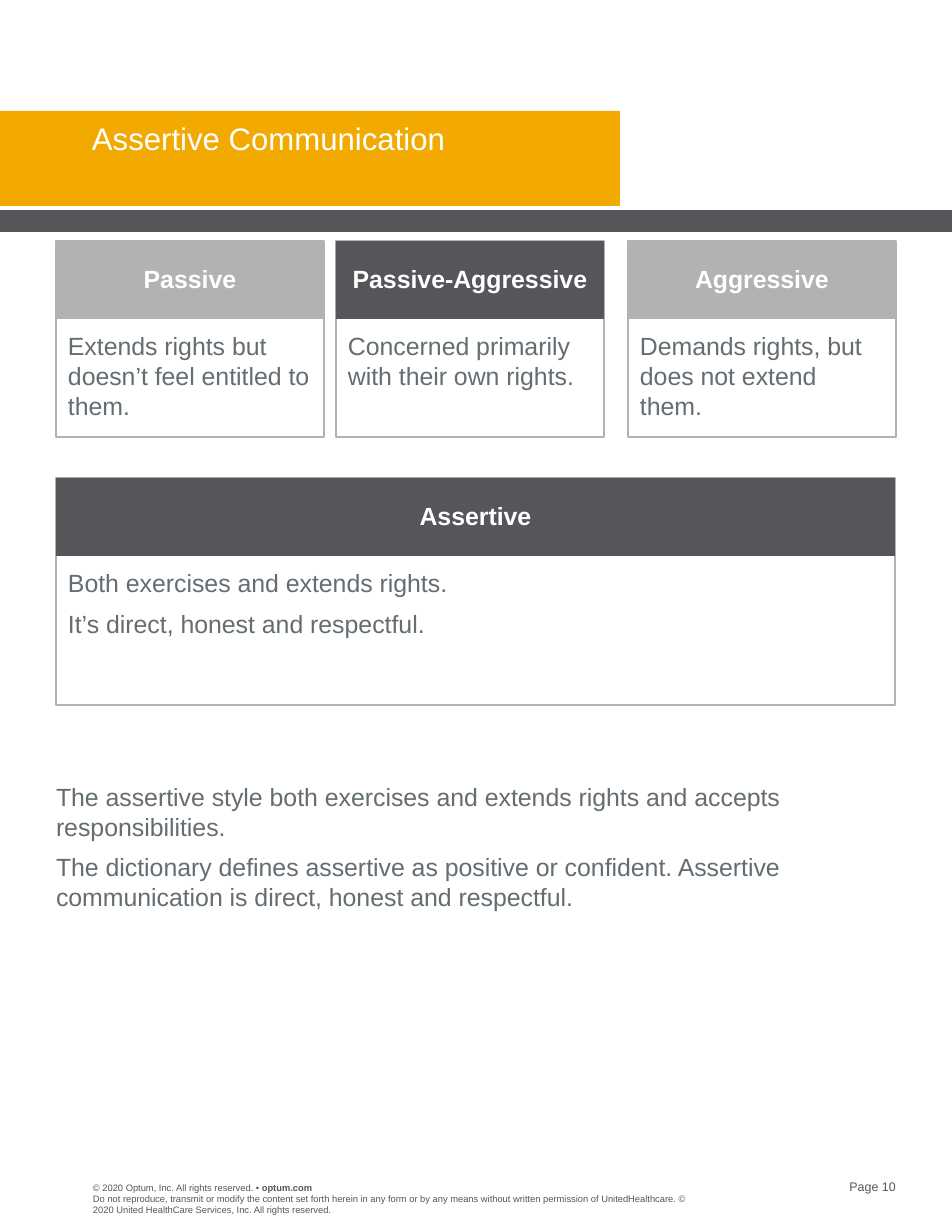
from pptx import Presentation
from pptx.dml.color import RGBColor
from pptx.enum.shapes import MSO_SHAPE as Shape
from pptx.enum.text import MSO_ANCHOR as Anchor, PP_ALIGN as Align
from pptx.util import Emu, Pt

SCALE = 914400 / 112
COLORS = {"amber": "F2AA00", "dark": "55565A", "light": "B1B3B3", "text": "646D72", "white": "FFFFFF"}


def px(length):
    return Emu(round(length * SCALE))


def color(name):
    return RGBColor.from_string(COLORS[name])


def write(frame, text, size=16, fill="text", bold=False, align=Align.LEFT, anchor=Anchor.TOP,
          insets=(0, 0, 0, 0), after=0, spacing=None, wrap=True):
    """Fill a text frame, one paragraph per line, with ** switching bold."""
    frame.word_wrap = wrap
    frame.vertical_anchor = anchor
    frame.margin_left, frame.margin_top, frame.margin_right, frame.margin_bottom = map(px, insets)
    for index, line in enumerate(text.split("\n")):
        paragraph = frame.add_paragraph() if index else frame.paragraphs[0]
        paragraph.alignment = align
        paragraph.space_after = Pt(after)
        if spacing:
            paragraph.line_spacing = spacing
        for part, words in enumerate(line.split("**")):
            run = paragraph.add_run()
            run.text = words
            run.font.name = "Arial"
            run.font.size = Pt(size)
            run.font.bold = bold or part % 2 == 1
            run.font.color.rgb = color(fill)


class Page:
    def __init__(self, slide):
        self.slide = slide

    def box(self, left, top, width, height, fill=None, line=None):
        shape = self.slide.shapes.add_shape(Shape.RECTANGLE, *map(px, (left, top, width, height)))
        shape.shadow.inherit = False
        if fill:
            shape.fill.solid()
            shape.fill.fore_color.rgb = color(fill)
        else:
            shape.fill.background()
        if line:
            shape.line.color.rgb = color(line)
            shape.line.width = Pt(1)
        else:
            shape.line.fill.background()
        return shape

    def label(self, left, top, width, height, text, **style):
        shape = self.slide.shapes.add_textbox(*map(px, (left, top, width, height)))
        write(shape.text_frame, text, **style)

    def card(self, left, top, width, height, heading, body, fill):
        panel = self.box(left, top, width, height, line="light")
        write(panel.text_frame, body, insets=(12, 90, 12, 0), after=6.7)
        header = self.box(left, top, width, 78, fill=fill)
        write(header.text_frame, heading, fill="white", bold=True, align=Align.CENTER,
              anchor=Anchor.MIDDLE, insets=(0, 0, 0, 3))


def main():
    presentation = Presentation()
    presentation.slide_width, presentation.slide_height = px(952), px(1232)
    page = Page(presentation.slides.add_slide(presentation.slide_layouts[6]))

    page.box(0, 111, 620, 95, fill="amber")
    page.box(0, 210, 952, 22, fill="dark")
    page.label(92, 124, 504, 68, "Assertive Communication", size=20, fill="white", spacing=0.9)

    styles = [
        (56, "Passive", "Extends rights but doesn’t feel entitled to them.", "light"),
        (336, "Passive-Aggressive", "Concerned primarily with their own rights.", "dark"),
        (628, "Aggressive", "Demands rights, but does not extend them.", "light"),
    ]
    for left, heading, body, fill in styles:
        page.card(left, 241, 268, 196, heading, body, fill)
    page.card(56, 478, 839, 227, "Assertive",
              "Both exercises and extends rights.\nIt’s direct, honest and respectful.", "dark")

    page.label(56, 782, 839, 172,
               "The assertive style both exercises and extends rights and accepts responsibilities.\n"
               "The dictionary defines assertive as positive or confident. "
               "Assertive communication is direct, honest and respectful.", after=6.7)

    page.label(93, 1182, 224, 11, "© 2020 Optum, Inc. All rights reserved. • **optum.com**",
               size=6, fill="dark", wrap=False)
    page.label(93, 1193, 594, 22,
               "Do not reproduce, transmit or modify the content set forth herein in any form or by any "
               "means without written permission of UnitedHealthcare. © 2020 United HealthCare "
               "Services, Inc. All rights reserved.", size=6, fill="dark")
    page.label(805, 1179, 91, 15, "Page 10", size=8, fill="dark", align=Align.RIGHT)

    presentation.save("out.pptx")


if __name__ == "__main__":
    main()
